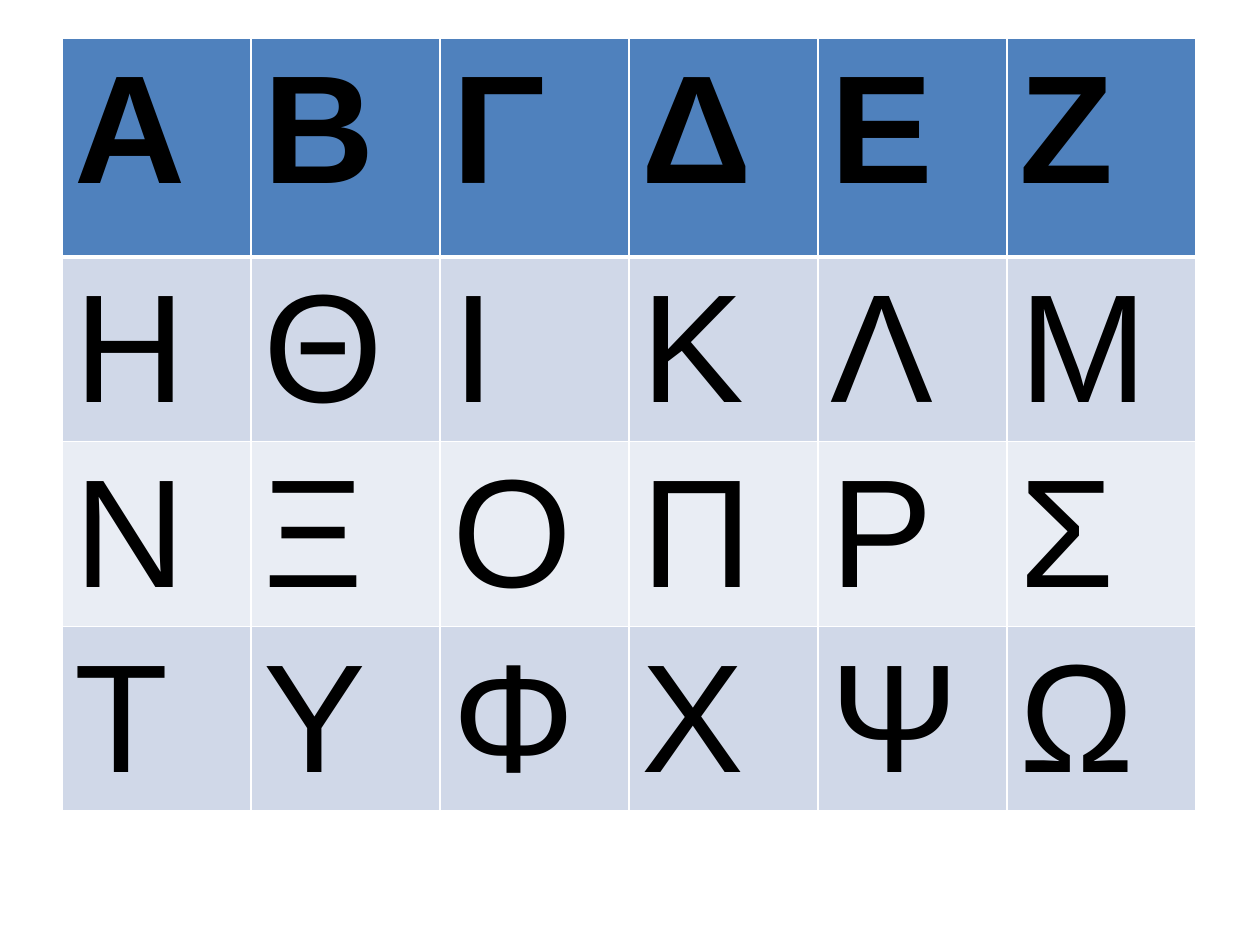
import pptx
import pptx.util
import pptx.dml.color
import pptx.oxml
import pptx.oxml.ns

Pt = pptx.util.Pt
ROWS = ["ΑΒΓΔΕΖ", "ΗΘΙΚΛΜ", "ΝΞΟΠΡΣ", "ΤΥΦΧΨΩ"]
FILLS = ["4F81BD", "D0D8E8", "E9EDF4", "D0D8E8"]
# Body rows are low and grow to fit their letters.
HEIGHTS = [125.28, 29.52, 29.52, 14.4]
FONT = {"name": "Arial", "size": Pt(88)}


def color(target, value):
    target.rgb = pptx.dml.color.RGBColor.from_string(value)


def edge(cell, widths):
    """Draw white cell borders; widths maps side (L, R, T, B) to points."""
    props = cell._tc.get_or_add_tcPr()
    for place, (side, width) in enumerate(widths.items()):
        line = pptx.oxml.parse_xml(
            f'<a:ln{side} {pptx.oxml.ns.nsdecls("a")} w="{Pt(width)}">'
            '<a:solidFill><a:srgbClr val="FFFFFF"/></a:solidFill>'
            f'</a:ln{side}>')
        props.insert(place, line)


def letter(cell, text, fill, bold):
    cell.fill.solid()
    color(cell.fill.fore_color, fill)
    run = cell.text_frame.paragraphs[0].add_run()
    run.text = text
    for name, value in {**FONT, "bold": bold}.items():
        setattr(run.font, name, value)
    color(run.font.color, "000000")


def grid(slide, left, top, width, height):
    count = len(ROWS[0])
    frame = slide.shapes.add_table(
        len(ROWS), count, Pt(left), Pt(top), Pt(width), Pt(height))
    table = frame.table
    for col in table.columns:
        col.width = Pt(width / count)
    for r, letters in enumerate(ROWS):
        table.rows[r].height = Pt(HEIGHTS[r])
        widths = {"L": 1, "R": 1, "T": 3 if r == 1 else 1,
                  "B": 3 if r == 0 else 1}
        for c, text in enumerate(letters):
            cell = table.cell(r, c)
            letter(cell, text, FILLS[r], r == 0)
            edge(cell, widths)
    frame.height = Pt(height)


def main():
    deck = pptx.Presentation()
    deck.slide_width, deck.slide_height = Pt(720), Pt(540)
    slide = deck.slides.add_slide(deck.slide_layouts[6])
    grid(slide, 35.28, 21.6, 648, 463.68)
    deck.save("out.pptx")


if __name__ == "__main__":
    main()
